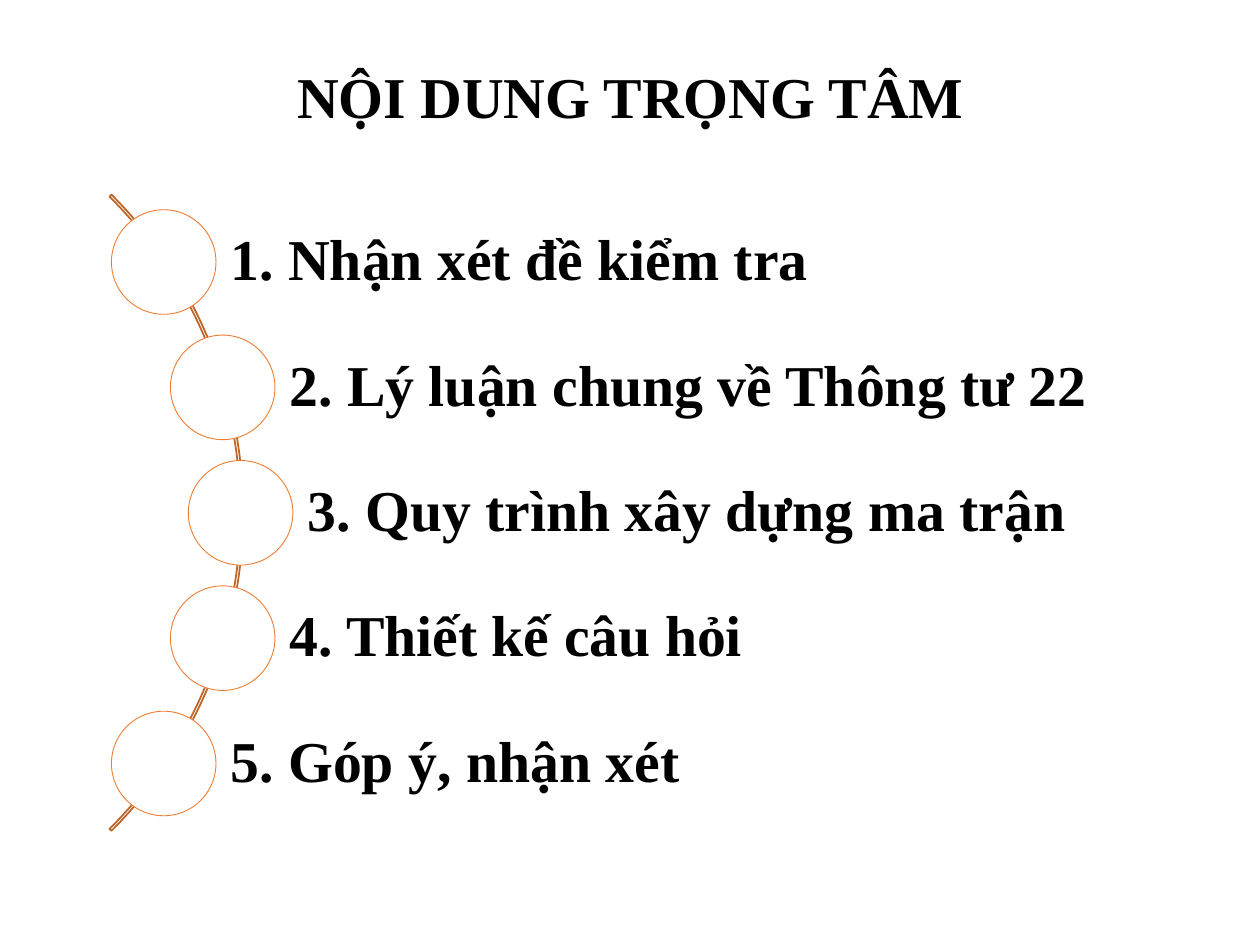
"""Build a slide that lists five key topics along an arc."""
from math import sqrt

from pptx import Presentation
from pptx.dml.color import RGBColor
from pptx.enum.shapes import MSO_SHAPE
from pptx.enum.text import MSO_ANCHOR, PP_ALIGN
from pptx.util import Inches, Pt

TITLE = "NỘI DUNG TRỌNG TÂM"
TOPICS = [
    "1. Nhận xét đề kiểm tra",
    "2. Lý luận chung về Thông tư 22",
    "3. Quy trình xây dựng ma trận",
    "4. Thiết kế câu hỏi",
    "5. Góp ý, nhận xét",
]

BLACK = RGBColor(0x00, 0x00, 0x00)
WHITE = RGBColor(0xFF, 0xFF, 0xFF)
ORANGE = RGBColor(0xED, 0x7D, 0x31)
RUST = RGBColor(0xBE, 0x64, 0x27)

MID_X, MID_Y = -1.64, 4.07
ARC_SIZE = 7.14
RADIUS = 3.55
PITCH = 0.995
DOT = 0.83
ROW = 0.66
RIGHT = 9.13


def add_form(slide, kind, box, fill=None, line=None, width=1):
    form = slide.shapes.add_shape(kind, *map(Inches, box))
    form.shadow.inherit = False
    if fill is None:
        form.fill.background()
    else:
        form.fill.solid()
        form.fill.fore_color.rgb = fill
    if line is None:
        form.line.fill.background()
    else:
        form.line.color.rgb = line
        form.line.width = Pt(width)
    return form


def put_text(shape, text, align=PP_ALIGN.LEFT, left=0.1, size=33, color=BLACK):
    frame = shape.text_frame
    frame.word_wrap = True
    frame.vertical_anchor = MSO_ANCHOR.MIDDLE
    frame.margin_left = Inches(left)
    frame.margin_right = frame.margin_top = frame.margin_bottom = Inches(0.09)
    para = frame.paragraphs[0]
    para.alignment = align
    para.line_spacing = 0.9
    run = para.add_run()
    run.text = text
    run.font.name = "Times New Roman"
    run.font.size = Pt(size)
    run.font.bold = True
    run.font.color.rgb = color


def add_arc(slide):
    half = ARC_SIZE / 2
    box = (MID_X - half, MID_Y - half, ARC_SIZE, ARC_SIZE)
    arc = add_form(slide, MSO_SHAPE.BLOCK_ARC, box, line=RUST)
    for index, value in enumerate((189, 27, 0.003)):
        arc.adjustments[index] = value


def add_topic(slide, index, text):
    shift = (index - (len(TOPICS) - 1) / 2) * PITCH
    x = MID_X + sqrt(RADIUS ** 2 - shift ** 2)
    y = MID_Y + shift
    row = add_form(slide, MSO_SHAPE.RECTANGLE,
                   (x, y - ROW / 2, RIGHT - x, ROW), fill=WHITE)
    put_text(row, text, left=0.53)
    add_form(slide, MSO_SHAPE.OVAL, (x - DOT / 2, y - DOT / 2, DOT, DOT),
             fill=WHITE, line=ORANGE, width=0.5)


def main():
    deck = Presentation()
    deck.slide_width, deck.slide_height = Inches(10), Inches(7.5)
    slide = deck.slides.add_slide(deck.slide_layouts[6])
    title = slide.shapes.add_textbox(*map(Inches, (1.53, 0.42, 6.94, 0.75)))
    put_text(title, TITLE, align=PP_ALIGN.CENTER)
    add_arc(slide)
    for index, text in enumerate(TOPICS):
        add_topic(slide, index, text)
    deck.save("out.pptx")


if __name__ == "__main__":
    main()
